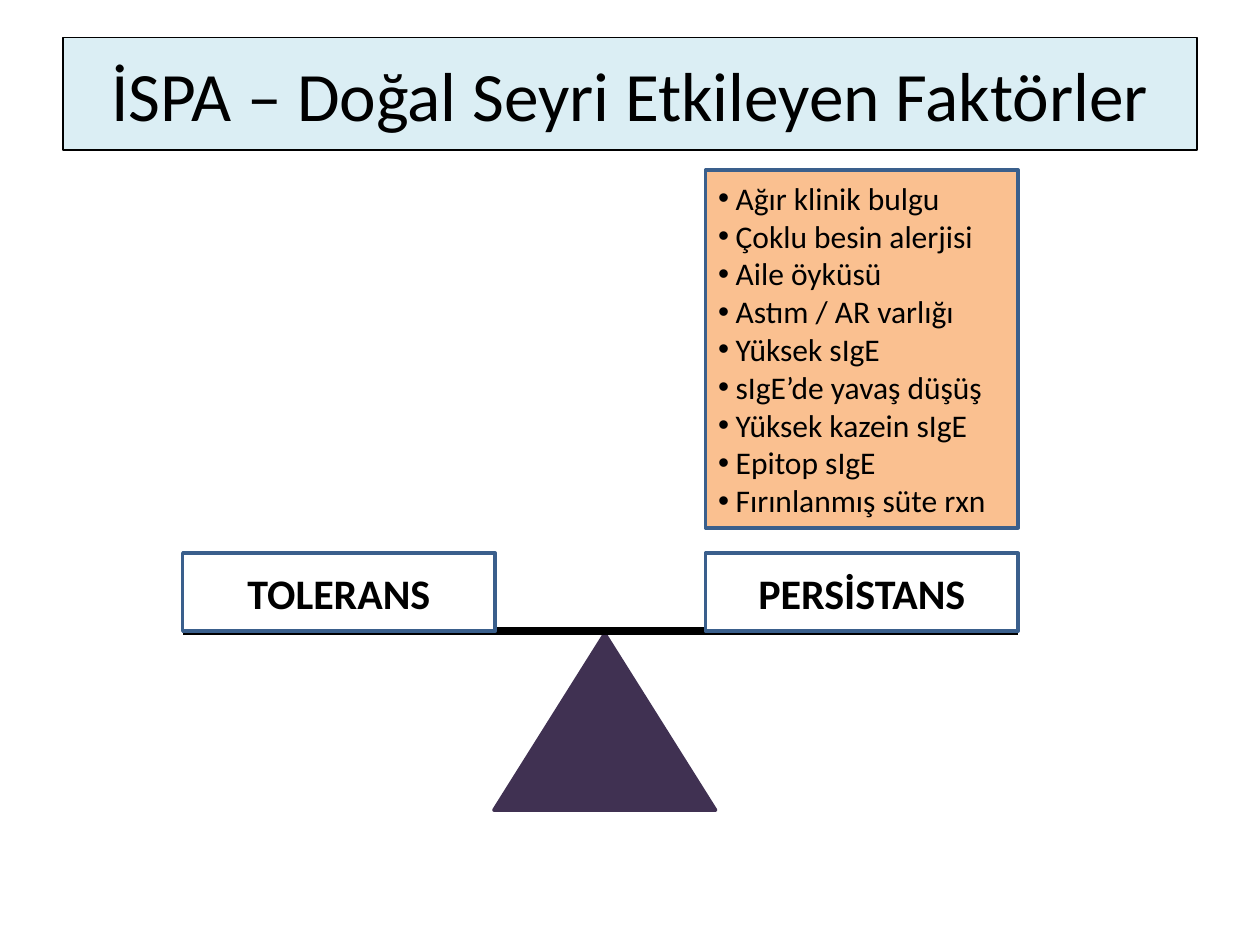
from dataclasses import dataclass

from lxml import etree
from pptx import Presentation
from pptx.dml.color import RGBColor
from pptx.enum.shapes import MSO_CONNECTOR, MSO_SHAPE
from pptx.enum.text import MSO_ANCHOR, PP_ALIGN
from pptx.oxml.ns import qn
from pptx.util import Inches, Pt

RECTANGLE = MSO_SHAPE.RECTANGLE
TRIANGLE = MSO_SHAPE.ISOSCELES_TRIANGLE
STRAIGHT = MSO_CONNECTOR.STRAIGHT
MIDDLE = MSO_ANCHOR.MIDDLE
CENTER, LEFT = PP_ALIGN.CENTER, PP_ALIGN.LEFT


@dataclass(frozen=True)
class Theme:
    font: str = "Calibri"
    ink: str = "000000"
    banner: str = "DBEEF4"
    pan: str = "FFFFFF"
    border: str = "3A5F8C"
    factors: str = "FAC090"
    pivot: str = "403152"
    title_size: float = 39.6
    label_size: float = 24
    factor_size: float = 18
    hairline: float = 0.75
    outline: float = 2
    beam: float = 4.5


theme = Theme()
prs = Presentation()
prs.slide_width, prs.slide_height = Inches(10), Inches(7.5)
slide = prs.slides.add_slide(prs.slide_layouts[6])
COL, ROW = prs.slide_width / 100, prs.slide_height / 75


def add_block(kind, col, row, cols, rows, fill, line, weight):
    block = slide.shapes.add_shape(
        kind, round(col * COL), round(row * ROW), round(cols * COL), round(rows * ROW))
    block.shadow.inherit = False
    block.fill.solid()
    block.fill.fore_color.rgb = RGBColor.from_string(fill)
    block.line.color.rgb = RGBColor.from_string(line)
    block.line.width = Pt(weight)
    return block


def write(block, lines, size, align, bold=False):
    frame = block.text_frame
    frame.word_wrap = True
    frame.vertical_anchor = MIDDLE
    frame.text = "\n".join(lines)
    for paragraph in frame.paragraphs:
        paragraph.alignment = align
        paragraph.font.name = theme.font
        paragraph.font.size = Pt(size)
        paragraph.font.bold = bold
        paragraph.font.color.rgb = RGBColor.from_string(theme.ink)


pan_width, pan_height = 24.8, 6.2
tolerance_col, persistence_col = 14.5, 56
beam_row = 50.1
pan_row = beam_row - pan_height
beam_end = persistence_col + pan_width

add_block(TRIANGLE, 39.2, 50.3, 17.6, 14, theme.pivot, theme.pivot, theme.outline)

beam = slide.shapes.add_connector(
    STRAIGHT, round(tolerance_col * COL), round(beam_row * ROW),
    round(beam_end * COL), round(beam_row * ROW))
beam.line.color.rgb = RGBColor.from_string(theme.ink)
beam.line.width = Pt(theme.beam)
etree.SubElement(beam.element.spPr, qn("a:effectLst"))

for outcome, col in (("TOLERANS", tolerance_col), ("PERSİSTANS", persistence_col)):
    pan = add_block(RECTANGLE, col, pan_row, pan_width, pan_height,
                    theme.pan, theme.border, theme.outline)
    write(pan, [outcome], theme.label_size, CENTER, bold=True)

persistence_factors = [
    "Ağır klinik bulgu",
    "Çoklu besin alerjisi",
    "Aile öyküsü",
    "Astım / AR varlığı",
    "Yüksek sIgE",
    "sIgE’de yavaş düşüş",
    "Yüksek kazein sIgE",
    "Epitop sIgE",
    "Fırınlanmış süte rxn",
]
weights = add_block(RECTANGLE, persistence_col, 13.5, pan_width, 28.4,
                    theme.factors, theme.border, theme.outline)
write(weights, persistence_factors, theme.factor_size, LEFT)
hanging = round(1.4 * COL)
for factor in weights.text_frame.paragraphs:
    properties = factor._p.get_or_add_pPr()
    properties.set("marL", str(hanging))
    properties.set("indent", str(-hanging))
    bullet_font = etree.Element(qn("a:buFont"), typeface="Arial")
    bullet = etree.Element(qn("a:buChar"), char="•")
    properties.insert(0, bullet_font)
    properties.insert(1, bullet)

banner = add_block(RECTANGLE, 5, 3, 90, 8.9, theme.banner, theme.ink, theme.hairline)
write(banner, ["İSPA – Doğal Seyri Etkileyen Faktörler"], theme.title_size, CENTER)

prs.save("out.pptx")
